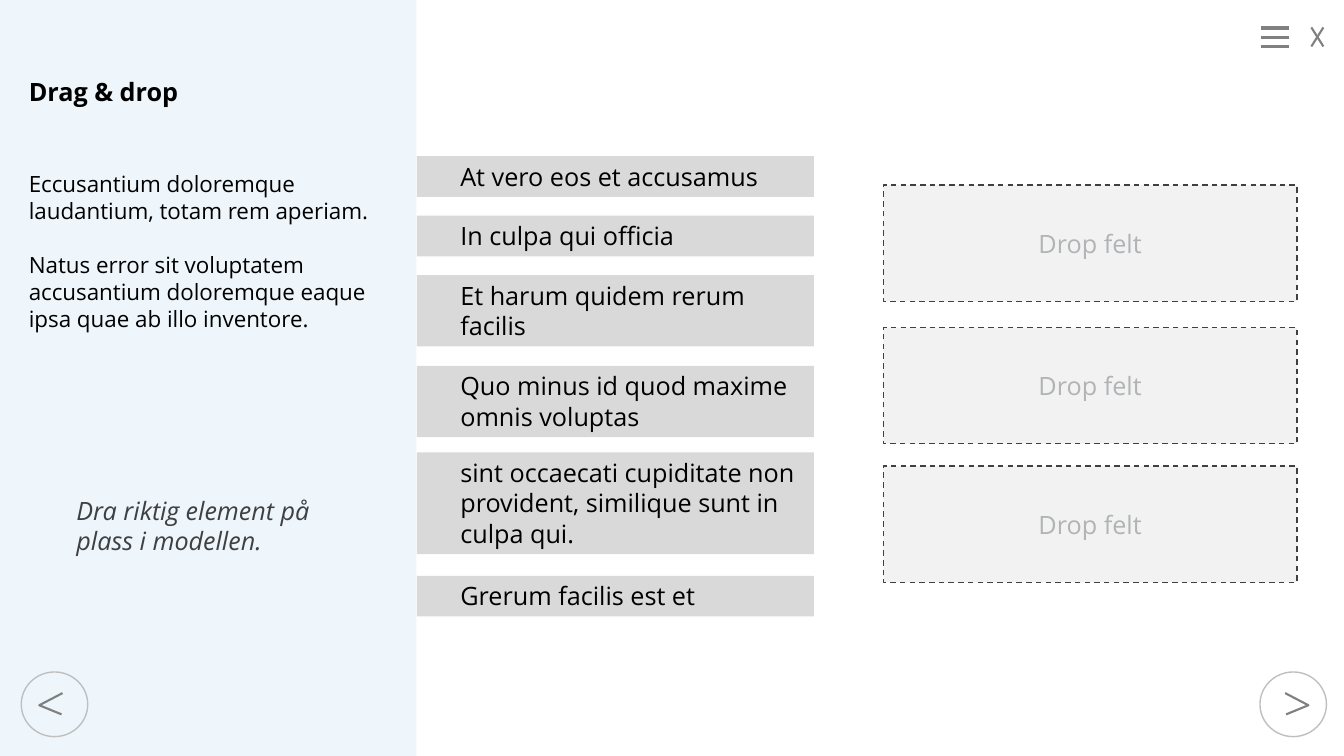
from lxml.etree import SubElement
from pptx import Presentation
from pptx.dml.color import RGBColor
from pptx.enum.dml import MSO_LINE
from pptx.enum.shapes import MSO_CONNECTOR, MSO_SHAPE
from pptx.enum.text import MSO_ANCHOR, PP_ALIGN
from pptx.oxml.ns import qn
from pptx.util import Pt

FONT = "Open Sans"
BLACK, DARK, GREY, PALE = "000000", "3F4042", "808080", "BFBFBF"

ANSWERS = [  # text, top, height
    ("At vero eos et accusamus", 111.6, 29),
    ("In culpa qui officia", 154.1, 29),
    ("Et harum quidem rerum facilis", 196.5, 51),
    ("Quo minus id quod maxime omnis voluptas", 261.3, 51),
    ("sint occaecati cupiditate non provident, similique sunt in culpa qui.",
     323.2, 72.7),
    ("Grerum facilis est et", 411.3, 29),
]
DROP_TOPS = [132.3, 234, 333]


def color(hex_code):
    return RGBColor.from_string(hex_code)


def outline(part, hex_code, width):
    part.line.color.rgb = color(hex_code)
    part.line.width = Pt(width)


def paint(part, fill=None):
    """Give a shape a plain fill or none, without line or shadow."""
    part.shadow.inherit = False
    part.line.fill.background()
    if fill:
        part.fill.solid()
        part.fill.fore_color.rgb = color(fill)
    else:
        part.fill.background()


def add_block(slide, kind, box, fill=None):
    block = slide.shapes.add_shape(kind, *map(Pt, box))
    paint(block, fill)
    return block


def write(frame, paragraphs, size, hex_code, align=PP_ALIGN.LEFT, gap=0,
          bold=False, italic=False):
    frame.text = "\n".join(paragraphs)
    for paragraph in frame.paragraphs:
        paragraph.alignment = align
        paragraph.space_after = Pt(gap)
        for run in paragraph.runs:
            run.font.name = FONT
            run.font.size = Pt(size)
            run.font.bold = bold
            run.font.italic = italic
            run.font.color.rgb = color(hex_code)


def add_text(slide, box, paragraphs, size, hex_code, wrap=True, **style):
    frame = slide.shapes.add_textbox(*map(Pt, box)).text_frame
    frame.word_wrap = wrap
    write(frame, paragraphs, size, hex_code, **style)


def add_stroke(slide, ends, width):
    stroke = slide.shapes.add_connector(MSO_CONNECTOR.STRAIGHT, *map(Pt, ends))
    outline(stroke, GREY, width)
    SubElement(stroke._element.spPr, qn("a:effectLst"))


def task_panel(slide, left, top, width, height):
    add_block(slide, MSO_SHAPE.RECTANGLE, (left, top, width, height), "EEF6FB")
    text_left = left + 13.5
    add_text(slide, (text_left, top + 51, 122.5, 29), ["Drag & drop"], 18,
             BLACK, wrap=False, bold=True)
    add_text(slide, (text_left, top + 118, 271.5, 124),
             ["Eccusantium doloremque laudantium, totam rem aperiam.",
              "Natus error sit voluptatem accusantium doloremque eaque "
              "ipsa quae ab illo inventore."],
             16, BLACK, gap=19.3)
    add_text(slide, (left + 47.5, top + 350, 192, 51),
             ["Dra riktig element på plass i modellen."], 18, DARK, italic=True)


def answer_column(slide, left, width):
    for answer, top, height in ANSWERS:
        bar = add_block(slide, MSO_SHAPE.RECTANGLE,
                        (left, top, width, height), "D9D9D9")
        frame = bar.text_frame
        frame.word_wrap = True
        frame.vertical_anchor = MSO_ANCHOR.TOP
        frame.margin_left = Pt(31)
        write(frame, [answer], 18, BLACK)


def drop_column(slide, left, width, height):
    for top in DROP_TOPS:
        field = add_block(slide, MSO_SHAPE.RECTANGLE,
                          (left, top, width, height), "F2F2F2")
        outline(field, DARK, 1)
        field.line.dash_style = MSO_LINE.DASH
        field.text_frame.vertical_anchor = MSO_ANCHOR.MIDDLE
        write(field.text_frame, ["Drop felt"], 18, "B2B3B5",
              align=PP_ALIGN.CENTER)


def menu_bar(slide, left, top):
    """Draw the three menu strokes and the closing cross."""
    for row in range(3):
        y = top + row * 6.6
        add_stroke(slide, (left, y, left + 20, y), 2.25)
    cross_left, cross_right = left + 36, left + 44.6
    add_stroke(slide, (cross_left, top - 0.4, cross_right, top + 13.2), 1.5)
    add_stroke(slide, (cross_right, top - 0.4, cross_left, top + 13.2), 1.5)


def page_button(slide, left, top, width, height, forward):
    circle = add_block(slide, MSO_SHAPE.OVAL, (left, top, width, height))
    outline(circle, PALE, 1)
    corners = [(18, 15.1), (34.6, 23.8), (18.7, 30.3)]
    start, *rest = [(Pt(left + (x if forward else width - x)), Pt(top + y))
                    for x, y in corners]
    builder = slide.shapes.build_freeform(*start)
    builder.add_line_segments(rest, close=False)
    chevron = builder.convert_to_shape()
    paint(chevron)
    outline(chevron, GREY, 1.5)


def main():
    deck = Presentation()
    deck.slide_width, deck.slide_height = Pt(960), Pt(540)
    slide = deck.slides.add_slide(deck.slide_layouts[6])
    menu_bar(slide, 900.7, 20)
    task_panel(slide, 0, 0, 297.5, 540)
    answer_column(slide, 297.8, 283.5)
    drop_column(slide, 630.9, 295.5, 83)
    page_button(slide, 15.2, 480, 47.5, 46.2, forward=False)
    page_button(slide, 900, 480, 47.5, 46.2, forward=True)
    deck.save("out.pptx")


if __name__ == "__main__":
    main()
